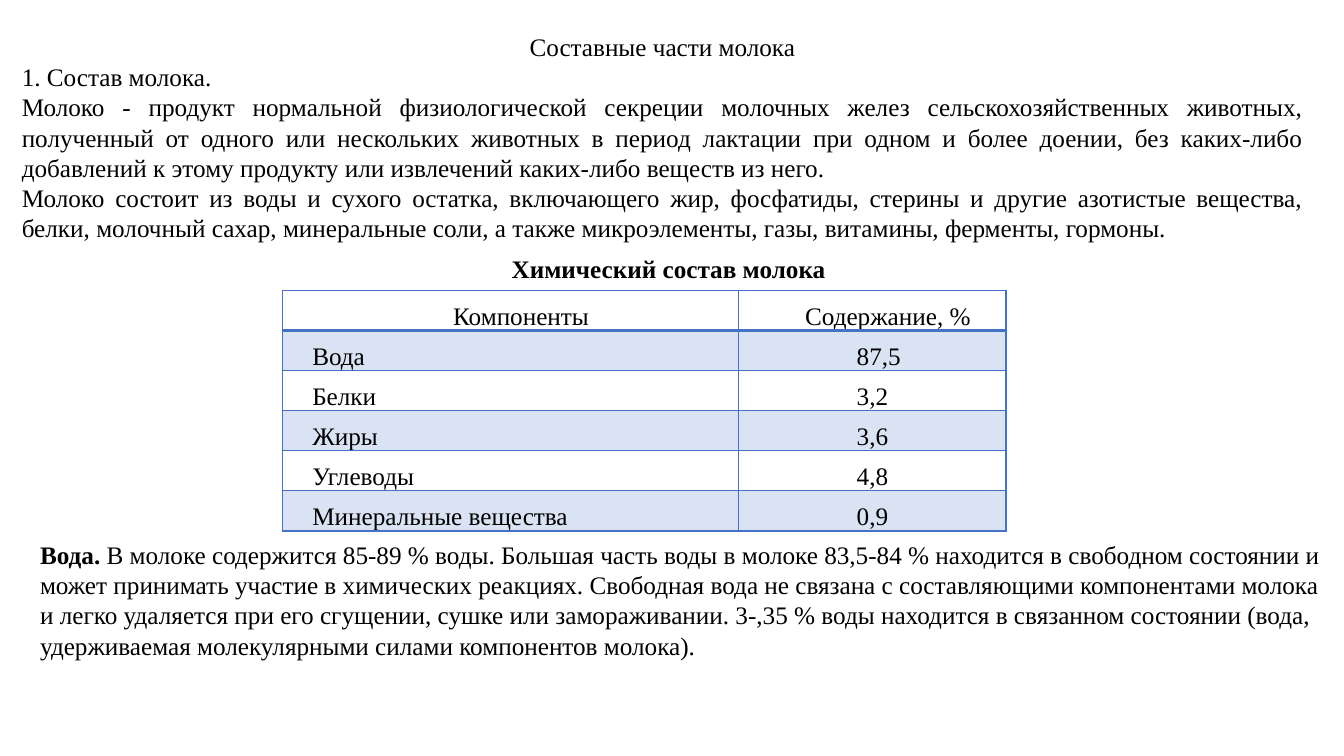
from dataclasses import dataclass

from lxml import etree
from pptx import Presentation
from pptx.dml.color import RGBColor
from pptx.enum.shapes import MSO_SHAPE
from pptx.enum.text import MSO_ANCHOR, MSO_AUTO_SIZE, PP_ALIGN
from pptx.oxml.ns import qn
from pptx.util import Cm, Pt

LEFT, CENTER, JUSTIFY = PP_ALIGN.LEFT, PP_ALIGN.CENTER, PP_ALIGN.JUSTIFY
RECTANGLE = MSO_SHAPE.RECTANGLE
GROW = MSO_AUTO_SIZE.SHAPE_TO_FIT_TEXT
MIDDLE = MSO_ANCHOR.MIDDLE


@dataclass(frozen=True)
class Theme:
    font: str = "Times New Roman"
    size: int = 18
    row_spacing: float = 28.6
    text: str = "000000"
    paper: str = "FFFFFF"
    border: str = "4472C4"
    band: str = "DAE3F3"


THEME = Theme()

INTRO = [
    ("Составные части молока", CENTER),
    ("1. Состав молока.", JUSTIFY),
    ("Молоко - продукт нормальной физиологической секреции молочных желез "
     "сельскохозяйственных животных, полученный от одного или нескольких животных "
     "в период лактации при одном и более доении, без каких-либо добавлений к этому "
     "продукту или извлечений каких-либо веществ из него.", JUSTIFY),
    ("Молоко состоит из воды и сухого остатка, включающего жир, фосфатиды, стерины "
     "и другие азотистые вещества, белки, молочный сахар, минеральные соли, а также "
     "микроэлементы, газы, витамины, ферменты, гормоны.", JUSTIFY),
]
CAPTION = "Химический состав молока"
COMPOSITION = [
    ("Компоненты", "Содержание, %"),
    ("Вода", "87,5"),
    ("Белки", "3,2"),
    ("Жиры", "3,6"),
    ("Углеводы", "4,8"),
    ("Минеральные вещества", "0,9"),
]
WATER_TERM = "Вода."
WATER_TEXT = (
    " В молоке содержится 85-89 % воды. Большая часть воды в молоке 83,5-84 % находится "
    "в свободном состоянии и может принимать участие в химических реакциях. Свободная "
    "вода не связана с составляющими компонентами молока и легко удаляется при его "
    "сгущении, сушке или замораживании. 3-,35 % воды находится в связанном состоянии "
    "(вода, удерживаемая молекулярными силами компонентов молока)."
)

COLUMN_WIDTHS = (Cm(11.51), Cm(6.73))
ROW_HEIGHT = Cm(1.01)
HEADER_INDENTS = (Cm(5), Cm(2.36))
BODY_INDENTS = (Cm(1.45), Cm(3.66))
FIRST_LINE = Cm(-0.71)


def write(para, text, bold=False, align=LEFT):
    para.alignment = align
    span = para.add_run()
    span.text = text
    span.font.name = THEME.font
    span.font.size = Pt(THEME.size)
    span.font.bold = bold
    span.font.color.rgb = RGBColor.from_string(THEME.text)


def add_text_frame(page, box):
    frame = page.shapes.add_textbox(*box).text_frame
    frame.word_wrap = True
    frame.auto_size = GROW
    return frame


def add_intro(page, box):
    frame = add_text_frame(page, box)
    for number, (text, align) in enumerate(INTRO):
        para = frame.add_paragraph() if number else frame.paragraphs[0]
        write(para, text, align=align)


def add_caption(page, box):
    caption = page.shapes.add_shape(RECTANGLE, *box)
    caption.shadow.inherit = False
    caption.fill.solid()
    caption.fill.fore_color.rgb = RGBColor.from_string(THEME.paper)
    caption.line.fill.background()
    frame = caption.text_frame
    frame.word_wrap = True
    frame.auto_size = GROW
    frame.vertical_anchor = MIDDLE
    write(frame.paragraphs[0], CAPTION, bold=True, align=CENTER)


def add_borders(cell, bottom):
    properties = cell._tc.get_or_add_tcPr()
    for side, points in (("L", 1), ("R", 1), ("T", 1), ("B", bottom)):
        line = etree.SubElement(properties, qn(f"a:ln{side}"), w=str(Pt(points)))
        fill = etree.SubElement(line, qn("a:solidFill"))
        etree.SubElement(fill, qn("a:srgbClr"), val=THEME.border)


def fill_cell(cell, text, indent, row):
    add_borders(cell, bottom=1 if row else 2)
    if row % 2:
        cell.fill.solid()
        cell.fill.fore_color.rgb = RGBColor.from_string(THEME.band)
    else:
        cell.fill.background()
    cell.margin_left = cell.margin_right = Cm(0.02)
    cell.margin_top = cell.margin_bottom = 0
    para = cell.text_frame.paragraphs[0]
    para.line_spacing = Pt(THEME.row_spacing)
    write(para, text)
    properties = para._p.get_or_add_pPr()
    properties.set("marL", str(indent))
    properties.set("indent", str(FIRST_LINE))


def add_composition_table(page, left, top):
    rows = len(COMPOSITION)
    table = page.shapes.add_table(
        rows, len(COLUMN_WIDTHS), left, top, sum(COLUMN_WIDTHS), ROW_HEIGHT * rows
    ).table
    table.first_row = table.horz_banding = False
    for column, width in zip(table.columns, COLUMN_WIDTHS):
        column.width = width
    for row, texts in enumerate(COMPOSITION):
        table.rows[row].height = ROW_HEIGHT
        indents = BODY_INDENTS if row else HEADER_INDENTS
        for column, (text, indent) in enumerate(zip(texts, indents)):
            fill_cell(table.cell(row, column), text, indent, row)


def add_water_note(page, box):
    para = add_text_frame(page, box).paragraphs[0]
    write(para, WATER_TERM, bold=True)
    write(para, WATER_TEXT)


def main():
    deck = Presentation()
    deck.slide_width, deck.slide_height = Cm(33.87), Cm(19.05)
    page = deck.slides.add_slide(deck.slide_layouts[6])
    add_intro(page, (Cm(0.3), Cm(0.66), Cm(32.79), Cm(6.4)))
    add_composition_table(page, Cm(7.11), Cm(7.32))
    add_caption(page, (Cm(0.76), Cm(6.25), Cm(32.18), Cm(1.02)))
    add_water_note(page, (Cm(0.76), Cm(13.46), Cm(32.79), Cm(3.33)))
    deck.save("out.pptx")


if __name__ == "__main__":
    main()
